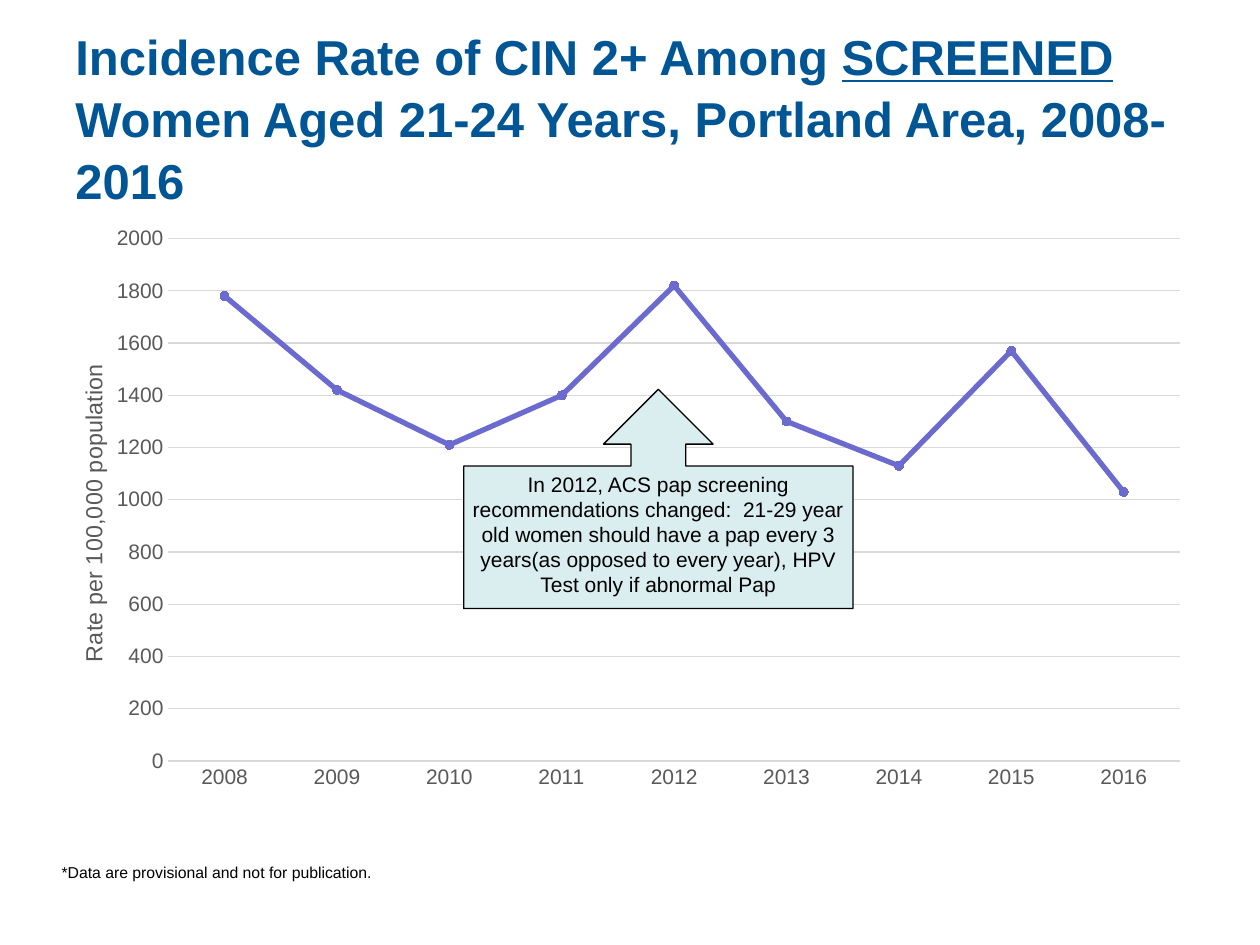
"""Build the slide on CIN 2+ incidence among screened women."""
from dataclasses import dataclass

from lxml import etree
from pptx import Presentation
from pptx.chart.data import CategoryChartData
from pptx.dml.color import RGBColor
from pptx.enum import chart as charts, shapes, text
from pptx.oxml import ns
from pptx.util import Inches, Pt


@dataclass(frozen=True)
class Theme:
    font: str = "Arial"
    heading: str = "005595"
    ink: str = "000000"
    axis: str = "595959"
    grid: str = "D9D9D9"
    rate: str = "6B6BCF"
    callout: str = "DAEDEF"
    heading_size: float = 28
    body_size: float = 12
    axis_title_size: float = 13.3
    note_size: float = 9
    thin: float = 0.75
    thick: float = 3


THEME = Theme()
YEARS = [str(year) for year in range(2008, 2017)]
RATES = [1780, 1420, 1210, 1400, 1820, 1300, 1130, 1570, 1030]
HEADING = [
    "Incidence Rate of CIN 2+ Among ",
    "SCREENED",
    " Women Aged 21-24 Years, Portland Area, 2008-2016",
]
GUIDANCE = (
    "In 2012, ACS pap screening recommendations changed:  21-29 year old women "
    "should have a pap every 3 years(as opposed to every year), "
    "HPV Test only if abnormal Pap"
)


def style_font(font, size, color, bold=False):
    font.name = THEME.font
    font.size = Pt(size)
    font.bold = bold
    font.color.rgb = RGBColor.from_string(color)


def style_line(line, color, width):
    line.color.rgb = RGBColor.from_string(color)
    line.width = Pt(width)


def paint(fill, color):
    fill.solid()
    fill.fore_color.rgb = RGBColor.from_string(color)


def add_box(slide, left, top, width, height):
    box = slide.shapes.add_textbox(
        Inches(left), Inches(top), Inches(width), Inches(height))
    box.text_frame.word_wrap = True
    return box.text_frame


def add_heading(slide):
    frame = add_box(slide, 0.5, 0.3, 9, 1.25)
    frame.vertical_anchor = text.MSO_ANCHOR.MIDDLE
    paragraph = frame.paragraphs[0]
    paragraph.line_spacing = 1.05
    for part in HEADING:
        run = paragraph.add_run()
        run.text = part
        style_font(run.font, THEME.heading_size, THEME.heading, bold=True)
        run.font.underline = part == "SCREENED"


def set_layout(parent, **settings):
    """Replace the manual layout of a chart part."""
    layout = parent.find(ns.qn("c:layout"))
    if layout is None:
        layout = etree.Element(ns.qn("c:layout"))
        text_body = parent.find(ns.qn("c:tx"))
        parent.insert(0 if text_body is None else 1, layout)
    manual = etree.SubElement(layout, ns.qn("c:manualLayout"))
    for tag, value in settings.items():
        etree.SubElement(manual, ns.qn(f"c:{tag}")).set("val", str(value))


def style_axis(axis):
    axis.major_tick_mark = axis.minor_tick_mark = charts.XL_TICK_MARK.NONE
    style_font(axis.tick_labels.font, THEME.body_size, THEME.axis)


def style_rate_axis(axis):
    style_axis(axis)
    axis.minimum_scale, axis.maximum_scale, axis.major_unit = 0, 2000, 200
    axis.tick_labels.number_format = "0"
    axis.tick_labels.number_format_is_linked = False
    axis.format.line.fill.background()
    style_line(axis.major_gridlines.format.line, THEME.grid, THEME.thin)
    title = axis.axis_title
    title.text_frame.text = "Rate per 100,000 population"
    style_font(title.text_frame.paragraphs[0].runs[0].font,
               THEME.axis_title_size, THEME.axis)
    set_layout(title._element, xMode="edge", yMode="edge", x=0.01, y=0.24)


def add_rate_chart(slide):
    data = CategoryChartData(number_format="0")
    data.categories = YEARS
    data.add_series("Series 1", RATES)
    chart = slide.shapes.add_chart(
        charts.XL_CHART_TYPE.LINE_MARKERS,
        Inches(0.5), Inches(1.73), Inches(9), Inches(4.69), data).chart
    style_font(chart.font, 10, THEME.ink)
    chart.has_legend = chart.has_title = False
    style_axis(chart.category_axis)
    style_line(chart.category_axis.format.line, THEME.grid, THEME.thin)
    style_rate_axis(chart.value_axis)

    plot = chart.plots[0]
    plot.vary_by_categories = False
    rates = plot.series[0]
    rates.smooth = False
    style_line(rates.format.line, THEME.rate, THEME.thick)
    rates.marker.style = charts.XL_MARKER_STYLE.CIRCLE
    rates.marker.size = 5
    paint(rates.marker.format.fill, THEME.rate)
    style_line(rates.marker.format.line, THEME.rate, THEME.thin)
    plot_area = chart._chartSpace.find(".//" + ns.qn("c:plotArea"))
    set_layout(plot_area, layoutTarget="inner", xMode="edge", yMode="edge",
               x=0.093, y=0.035, w=0.892, h=0.884)


def add_guidance(slide):
    callout = slide.shapes.add_shape(
        shapes.MSO_SHAPE.UP_ARROW_CALLOUT,
        Inches(3.68), Inches(3.09), Inches(3.09), Inches(1.74))
    callout.shadow.inherit = False
    paint(callout.fill, THEME.callout)
    style_line(callout.line, THEME.ink, THEME.thin)
    frame = callout.text_frame
    frame.word_wrap = True
    frame.vertical_anchor = text.MSO_ANCHOR.TOP
    frame.margin_left = frame.margin_right = Inches(0.07)
    frame.margin_top = frame.margin_bottom = Inches(0.04)
    frame.text = GUIDANCE
    paragraph = frame.paragraphs[0]
    paragraph.alignment = text.PP_ALIGN.CENTER
    style_font(paragraph.runs[0].font, THEME.body_size, THEME.ink)


def add_footnote(slide):
    frame = add_box(slide, 0.39, 6.8, 6.58, 0.25)
    frame.text = "*Data are provisional and not for publication."
    style_font(frame.paragraphs[0].runs[0].font, THEME.note_size, THEME.ink)


def main():
    deck = Presentation()
    deck.slide_width, deck.slide_height = Inches(10), Inches(7.5)
    slide = deck.slides.add_slide(deck.slide_layouts[6])
    add_heading(slide)
    add_rate_chart(slide)
    add_guidance(slide)
    add_footnote(slide)
    deck.save("out.pptx")


if __name__ == "__main__":
    main()
